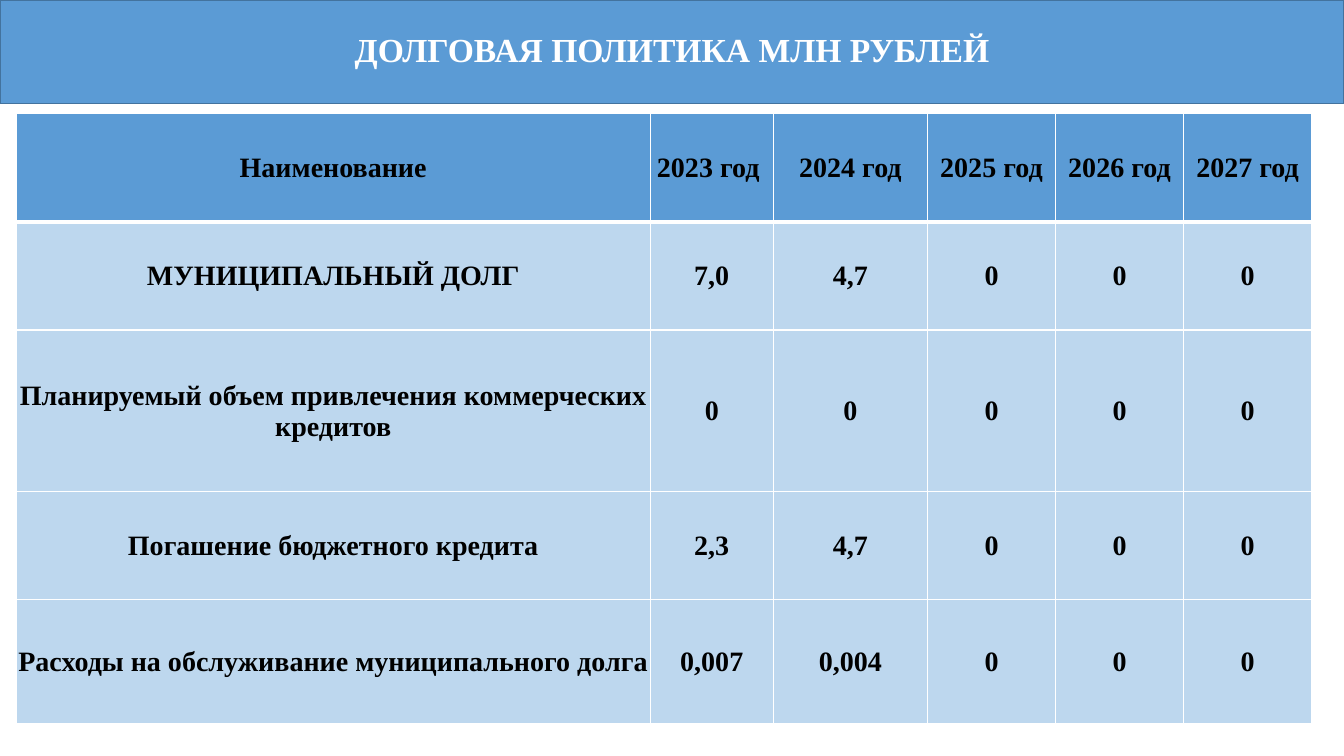
from dataclasses import dataclass

from lxml.etree import SubElement
from pptx import Presentation
from pptx.dml.color import RGBColor
from pptx.enum.shapes import MSO_SHAPE as Shape
from pptx.enum.text import MSO_ANCHOR as Anchor, PP_ALIGN as Align
from pptx.oxml.ns import qn
from pptx.util import Inches, Pt


@dataclass(frozen=True)
class Theme:
    """Colours, font and sizes of the slide."""
    accent: str = "5B9BD5"
    accent_line: str = "43739E"
    body: str = "BDD7EE"
    light: str = "FFFFFF"
    dark: str = "000000"
    font: str = "Times New Roman"
    title_size: int = 24
    table_size: int = 20
    rule: int = 1
    header_rule: int = 3


THEME = Theme()
SLIDE_WIDTH, SLIDE_HEIGHT = 13.33, 7.5
TITLE_BOX = (0, 0, SLIDE_WIDTH, 1.03)
TABLE_BOX = (0.16, 1.13, 12.85, 6.05)
COLUMN_WEIGHTS = (6.29, 1.22, 1.53, 1.27, 1.27, 1.27)
ROW_WEIGHTS = (1.07, 1.07, 1.6, 1.07, 1.23)
TITLE = "ДОЛГОВАЯ ПОЛИТИКА МЛН РУБЛЕЙ"
DEBT_ROWS = (
    ("Наименование", "2023 год ", "2024 год", "2025 год", "2026 год", "2027 год"),
    ("МУНИЦИПАЛЬНЫЙ ДОЛГ", "7,0", "4,7", "0", "0", "0"),
    ("Планируемый объем привлечения коммерческих кредитов", "0", "0", "0", "0", "0"),
    ("Погашение бюджетного кредита", "2,3", "4,7", "0", "0", "0"),
    ("Расходы на обслуживание муниципального долга", "0,007", "0,004", "0", "0", "0"),
)
CELL_FORMAT = {
    "vertical_anchor": Anchor.MIDDLE,
    "margin_left": Inches(0.01),
    "margin_top": Inches(0.01),
    "margin_right": Inches(0.01),
    "margin_bottom": 0,
}


def apply_format(target, values):
    """Set every attribute in values on the target."""
    for name, value in values.items():
        setattr(target, name, value)


def paint(fill, colour):
    """Give a fill one solid colour."""
    fill.solid()
    fill.fore_color.rgb = RGBColor.from_string(colour)


def write_text(frame, text, size, colour):
    """Write one bold centred paragraph and return it."""
    paragraph = frame.paragraphs[0]
    paragraph.alignment = Align.CENTER
    run = paragraph.add_run()
    run.text = text
    apply_format(run.font, {"name": THEME.font, "size": Pt(size), "bold": True})
    run.font.color.rgb = RGBColor.from_string(colour)
    return paragraph


def draw_borders(cell, bottom, top):
    """Draw light rules on the four sides of a cell."""
    properties = cell._tc.get_or_add_tcPr()
    widths = {"L": THEME.rule, "R": THEME.rule, "T": top, "B": bottom}
    for position, (side, width) in enumerate(widths.items()):
        line = SubElement(properties, qn(f"a:ln{side}"), w=str(Pt(width)))
        solid = SubElement(line, qn("a:solidFill"))
        SubElement(solid, qn("a:srgbClr"), val=THEME.light)
        properties.insert(position, line)


def add_title_band(slide, box):
    """Place the title band in the box."""
    band = slide.shapes.add_shape(Shape.RECTANGLE, *map(Inches, box))
    band.shadow.inherit = False
    paint(band.fill, THEME.accent)
    band.line.color.rgb = RGBColor.from_string(THEME.accent_line)
    band.line.width = Pt(THEME.rule)
    apply_format(band.text_frame, {"word_wrap": True, "vertical_anchor": Anchor.MIDDLE})
    paragraph = write_text(band.text_frame, TITLE, THEME.title_size, THEME.light)
    paragraph.line_spacing = 0.9


def add_debt_table(slide, box):
    """Place the debt table in the box, sharing it out by the weights."""
    width, height = box[2:]
    frame = slide.shapes.add_table(
        len(DEBT_ROWS), len(COLUMN_WEIGHTS), *map(Inches, box))
    table = frame.table
    for column, weight in zip(table.columns, COLUMN_WEIGHTS):
        column.width = Inches(width * weight / sum(COLUMN_WEIGHTS))
    for row, weight in zip(table.rows, ROW_WEIGHTS):
        row.height = Inches(height * weight / sum(ROW_WEIGHTS))
    for row_index, texts in enumerate(DEBT_ROWS):
        is_header = row_index == 0
        bottom = THEME.header_rule if is_header else THEME.rule
        top = THEME.header_rule if row_index == 1 else THEME.rule
        for column_index, text in enumerate(texts):
            cell = table.cell(row_index, column_index)
            apply_format(cell, CELL_FORMAT)
            paint(cell.fill, THEME.accent if is_header else THEME.body)
            draw_borders(cell, bottom, top)
            write_text(cell.text_frame, text, THEME.table_size, THEME.dark)


def main():
    """Build and save the presentation."""
    presentation = Presentation()
    apply_format(presentation, {
        "slide_width": Inches(SLIDE_WIDTH), "slide_height": Inches(SLIDE_HEIGHT)})
    slide = presentation.slides.add_slide(presentation.slide_layouts[6])
    add_debt_table(slide, TABLE_BOX)
    add_title_band(slide, TITLE_BOX)
    presentation.save("out.pptx")


if __name__ == "__main__":
    main()
